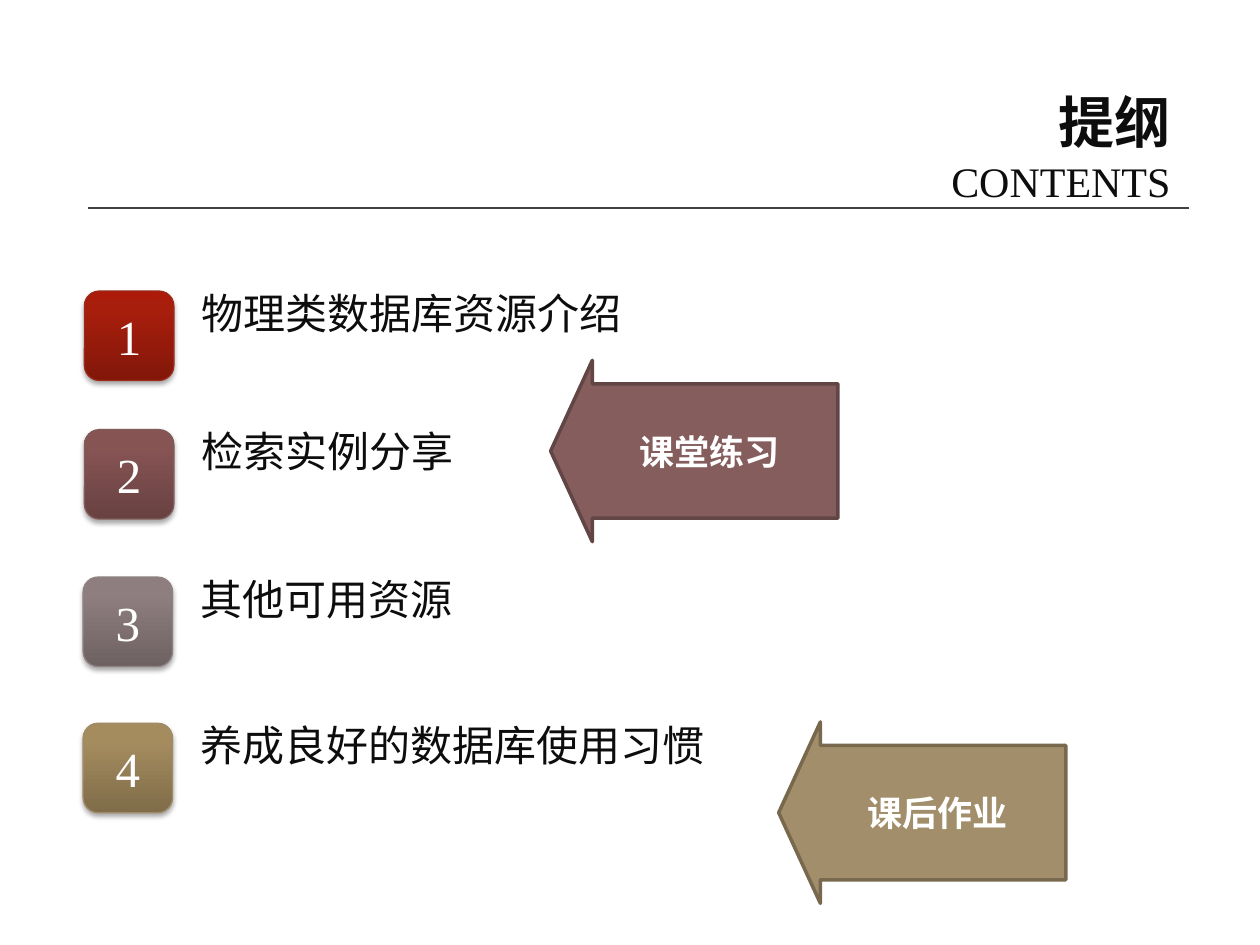
from copy import deepcopy

from lxml import etree
from pptx import Presentation
from pptx import util as u
from pptx.dml.color import RGBColor
from pptx.enum import shapes, text
from pptx.oxml.ns import qn

INK = RGBColor(0x0D, 0x0D, 0x0D)
WHITE = RGBColor(0xFF, 0xFF, 0xFF)
RULE = RGBColor(0x40, 0x40, 0x40)
RED = [RGBColor.from_string(c) for c in ("821709", "A81E0C", "AC1B09", "9B2A1B")]
ROSE = [RGBColor.from_string(c) for c in ("684141", "875454", "885454", "835A5A")]
GREY = [RGBColor.from_string(c) for c in ("6E6162", "8E7E7F", "8F7E80", "8E8182")]
SAND = [RGBColor.from_string(c) for c in ("7F6C49", "A58C5F", "A78D5E", "A08B66")]
ARROW_ROSE = RGBColor(0x85, 0x5D, 0x5D)
ARROW_ROSE_EDGE = RGBColor(0x62, 0x45, 0x45)
ARROW_SAND = RGBColor(0xA2, 0x8E, 0x6A)
ARROW_SAND_EDGE = RGBColor(0x78, 0x69, 0x4E)

SERIF = "Times New Roman"
CJK = "Noto Sans CJK SC"
STOP_POSITIONS = (0, 0.8, 1)
BADGE_SIZE = 0.71

# number, label, left and top of the badge, label width, badge colours
TOPICS = [
    ("1", "物理类数据库资源介绍", 0.67, 2.31, 3.57, RED),
    ("2", "检索实例分享", 0.67, 3.41, 2.22, ROSE),
    ("3", "其他可用资源", 0.66, 4.58, 2.22, GREY),
    ("4", "养成良好的数据库使用习惯", 0.66, 5.74, 4.24, SAND),
]
ARROWS = [
    ("课堂练习", 4.37, 2.86, ARROW_ROSE, ARROW_ROSE_EDGE),
    ("课后作业", 6.18, 5.73, ARROW_SAND, ARROW_SAND_EDGE),
]


def box(left, top, width, height):
    return [u.Inches(value) for value in (left, top, width, height)]


def set_attributes(target, values):
    for name, value in values.items():
        setattr(target, name, value)


def write(paragraph, content, size, color, align, bold=False, font_name=SERIF):
    """Fill a paragraph with one run that has Latin and East Asian fonts."""
    paragraph.alignment = align
    run = paragraph.add_run()
    run.text = content
    set_attributes(run.font, {"size": u.Pt(size), "bold": bold, "name": font_name})
    run.font.color.rgb = color
    etree.SubElement(run.font._element, qn("a:ea"), typeface=CJK)


def add_title(slide):
    title = slide.shapes.title
    left, top, width, height = box(0.39, 0.78, 9, 0.77)
    set_attributes(title, {"left": left, "top": top, "width": width, "height": height})
    frame = title.text_frame
    set_attributes(frame, {
        "word_wrap": True,
        "auto_size": text.MSO_AUTO_SIZE.NONE,
        "vertical_anchor": text.MSO_ANCHOR.MIDDLE,
    })
    right = text.PP_ALIGN.RIGHT
    write(frame.paragraphs[0], "提纲", 32, INK, right, bold=True)
    write(frame.add_paragraph(), "CONTENTS", 24, INK, right)


def add_rule(slide):
    line = slide.shapes.add_connector(
        shapes.MSO_CONNECTOR.STRAIGHT, *box(9.44, 1.65, 0.7, 1.65))
    line.line.color.rgb = RULE
    line.line.width = u.Pt(0.75)
    etree.SubElement(line._element.spPr, qn("a:effectLst"))


def fill_gradient(shape, colors):
    """Run three colours from the bottom of the shape to its top."""
    shape.fill.gradient()
    shape.fill.gradient_angle = 90
    stop_list = shape._element.spPr.find(".//" + qn("a:gsLst"))
    stop_list.append(deepcopy(stop_list[0]))
    for stop, color, position in zip(shape.fill.gradient_stops, colors, STOP_POSITIONS):
        stop.color.rgb = color
        stop.position = position


def add_soft_shadow(shape):
    effects = shape._element.spPr.find(qn("a:effectLst"))
    shadow = etree.SubElement(
        effects, qn("a:outerShdw"), blurRad=str(u.Pt(3.1)), dist=str(u.Pt(1.8)),
        dir="5400000", rotWithShape="0")
    color = etree.SubElement(shadow, qn("a:srgbClr"), val="000000")
    etree.SubElement(color, qn("a:alpha"), val="35000")


def add_centred_shape(parent, kind, area, edge, edge_width):
    shape = parent.shapes.add_shape(kind, *area)
    shape.shadow.inherit = False
    shape.line.color.rgb = edge
    shape.line.width = u.Pt(edge_width)
    shape.text_frame.vertical_anchor = text.MSO_ANCHOR.MIDDLE
    return shape


def add_topic(slide, number, label, left, top, width, colors):
    group = slide.shapes.add_group_shape()
    label_box = group.shapes.add_textbox(*box(left + 0.83, top - 0.08, width, 0.5))
    frame = label_box.text_frame
    set_attributes(frame, {
        "word_wrap": False, "auto_size": text.MSO_AUTO_SIZE.SHAPE_TO_FIT_TEXT})
    write(frame.paragraphs[0], label, 24, INK, text.PP_ALIGN.LEFT)

    *gradient, edge = colors
    badge = add_centred_shape(
        group, shapes.MSO_SHAPE.ROUNDED_RECTANGLE,
        box(left, top, BADGE_SIZE, BADGE_SIZE), edge, 0.75)
    fill_gradient(badge, gradient)
    add_soft_shadow(badge)
    write(badge.text_frame.paragraphs[0], number, 28, WHITE, text.PP_ALIGN.CENTER)


def add_task_arrow(slide, label, left, top, color, edge):
    arrow = add_centred_shape(
        slide, shapes.MSO_SHAPE.LEFT_ARROW, box(left, top, 2.28, 1.44), edge, 2)
    arrow.adjustments[0] = 0.74
    arrow.adjustments[1] = 0.23
    arrow.fill.solid()
    arrow.fill.fore_color.rgb = color
    write(arrow.text_frame.paragraphs[0], label, 20, WHITE,
          text.PP_ALIGN.CENTER, bold=True, font_name=CJK)


def main():
    presentation = Presentation()
    set_attributes(presentation, {
        "slide_width": u.Inches(10), "slide_height": u.Inches(7.5)})
    slide = presentation.slides.add_slide(presentation.slide_layouts[5])
    add_title(slide)
    add_rule(slide)
    for topic in TOPICS:
        add_topic(slide, *topic)
    for arrow in ARROWS:
        add_task_arrow(slide, *arrow)
    presentation.save("out.pptx")


if __name__ == "__main__":
    main()
